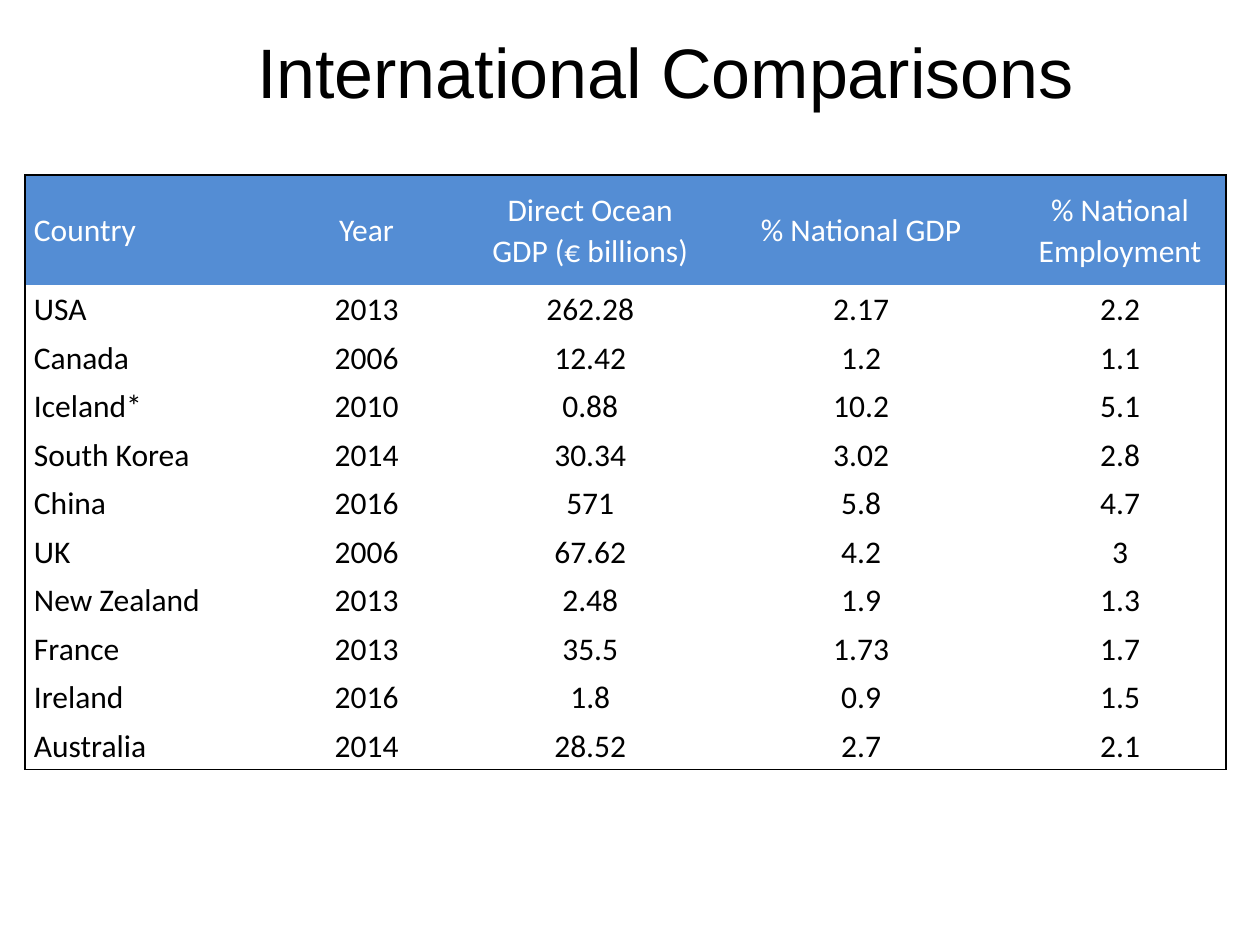
from lxml.etree import SubElement
from pptx import Presentation
from pptx.dml.color import RGBColor
from pptx.enum.text import MSO_ANCHOR as Anchor, PP_ALIGN as Align
from pptx.oxml.ns import qn
from pptx.util import Inches, Pt

COLORS = {"text": "000000", "header": "548DD4", "header_text": "FFFFFF", "border": "000000"}
NO_STYLE = "{2D5ABB26-0587-4C30-8999-92F81FD0307C}"
COLUMN_WIDTHS = [1.87, 1.68, 1.87, 2.43, 1.68]
HEADER_HEIGHT, ROW_HEIGHT = 0.87, 0.385
ROWS = [
    ["Country", "Year", "Direct Ocean GDP (€ billions)", "% National GDP", "% National Employment"],
    ["USA", "2013", "262.28", "2.17", "2.2"],
    ["Canada", "2006", "12.42", "1.2", "1.1"],
    ["Iceland*", "2010", "0.88", "10.2", "5.1"],
    ["South Korea", "2014", "30.34", "3.02", "2.8"],
    ["China", "2016", "571", "5.8", "4.7"],
    ["UK", "2006", "67.62", "4.2", "3"],
    ["New Zealand", "2013", "2.48", "1.9", "1.3"],
    ["France", "2013", "35.5", "1.73", "1.7"],
    ["Ireland", "2016", "1.8", "0.9", "1.5"],
    ["Australia", "2014", "28.52", "2.7", "2.1"],
]


def write_text(frame, text, *, font, size, color="text", align=Align.CENTER,
               line_spacing=None, space_after=None):
    para = frame.paragraphs[0]
    para.alignment = align
    para.line_spacing = line_spacing
    para.space_after = space_after
    span = para.add_run()
    span.text = text
    span.font.name = font
    span.font.size = Pt(size)
    span.font.color.rgb = RGBColor.from_string(COLORS[color])


def set_borders(cell, visible):
    """Draw the sides marked true in visible and hide the others."""
    props = cell._tc.get_or_add_tcPr()
    for index, (side, shown) in enumerate(visible.items()):
        line = SubElement(props, qn(f"a:ln{side}"), w=str(Pt(1)))
        if shown:
            fill = SubElement(line, qn("a:solidFill"))
            SubElement(fill, qn("a:srgbClr"), val=COLORS["border"])
        else:
            SubElement(line, qn("a:noFill"))
        props.insert(index, line)


def add_title(page, text):
    title = page.shapes.title
    title.left, title.top = Inches(1.06), Inches(0.05)
    title.width, title.height = Inches(8.44), Inches(1.02)
    title.text_frame.vertical_anchor = Anchor.MIDDLE
    write_text(title.text_frame, text, font="Arial", size=40)


def format_cell(cell, text, is_header, is_first_column):
    cell.vertical_anchor = Anchor.MIDDLE
    cell.margin_left = cell.margin_right = Inches(0.07)
    cell.margin_top = cell.margin_bottom = 0
    if is_header:
        cell.fill.solid()
        cell.fill.fore_color.rgb = RGBColor.from_string(COLORS["header"])
    else:
        cell.fill.background()
    write_text(cell.text_frame, text, font="Calibri", size=18,
               color="header_text" if is_header else "text",
               align=Align.LEFT if is_first_column else Align.CENTER,
               line_spacing=1.06, space_after=Pt(10))


def add_comparison_table(page):
    last_row, last_column = len(ROWS) - 1, len(COLUMN_WIDTHS) - 1
    height = HEADER_HEIGHT + last_row * ROW_HEIGHT
    frame = page.shapes.add_table(len(ROWS), len(COLUMN_WIDTHS), Inches(0.2), Inches(1.39),
                                  Inches(sum(COLUMN_WIDTHS)), Inches(height))
    table = frame.table
    table.horz_banding = False
    table._tbl.tblPr.find(qn("a:tableStyleId")).text = NO_STYLE
    for column, width in zip(table.columns, COLUMN_WIDTHS):
        column.width = Inches(width)
    for r, values in enumerate(ROWS):
        table.rows[r].height = Inches(ROW_HEIGHT if r else HEADER_HEIGHT)
        for c, value in enumerate(values):
            cell = table.cell(r, c)
            format_cell(cell, value, is_header=r == 0, is_first_column=c == 0)
            set_borders(cell, {"L": c == 0, "R": c == last_column,
                               "T": r == 0, "B": r == last_row})


def main():
    deck = Presentation()
    deck.slide_width, deck.slide_height = Inches(10), Inches(7.5)
    page = deck.slides.add_slide(deck.slide_layouts[5])
    add_title(page, "International Comparisons")
    add_comparison_table(page)
    deck.save("out.pptx")


if __name__ == "__main__":
    main()
